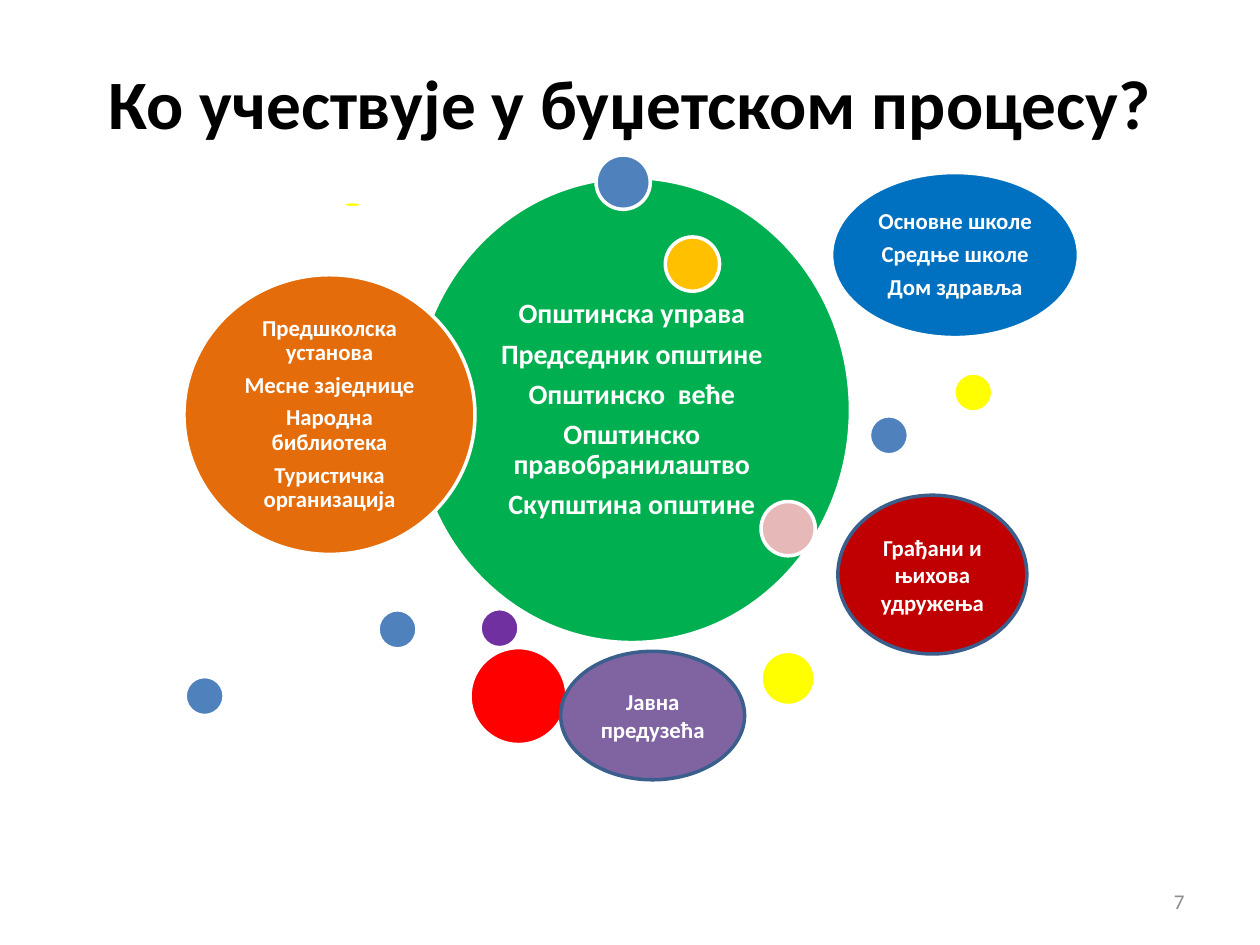
from dataclasses import dataclass

from pptx import Presentation
from pptx.dml.color import RGBColor
from pptx.enum.shapes import MSO_SHAPE
from pptx.enum.text import MSO_ANCHOR, PP_ALIGN
from pptx.util import Pt

ELLIPSE = MSO_SHAPE.OVAL
MIDDLE = MSO_ANCHOR.MIDDLE
CENTER = PP_ALIGN.CENTER
RIGHT = PP_ALIGN.RIGHT

FONT = "Calibri"
WHITE = "FFFFFF"
BLUE = "4F81BD"
YELLOW = "FFFF00"
OUTLINE = "3A5F8C"
SMALL, MEDIUM, LARGE = 22.3, 31, 55.4


@dataclass
class Bubble:
    left: float
    top: float
    width: float
    height: float
    fill: str
    text: str = ""
    size: float = 13
    inset: float = 3.6
    line: str = WHITE
    line_spacing: float = 0.9
    space_after: float = 0.35  # share of the text size


def dot(left: float, top: float, diameter: float, fill: str) -> Bubble:
    return Bubble(left, top, diameter, diameter, fill)


def group(left: float, top: float, width: float, height: float,
          fill: str, text: str) -> Bubble:
    """Outlined bubble for participants outside the municipality."""
    return Bubble(left, top, width, height, fill, text, inset=7.2,
                  line=OUTLINE, line_spacing=1, space_after=0)


# From back to front
BUBBLES = [
    Bubble(236.2, 101.5, 249.8, 265.7, "00B050",
           "Општинска управа\nПредседник општине\nОпштинско  веће\n"
           "Општинско правобранилаштво\nСкупштина општине", size=16, inset=5),
    dot(380.2, 135.4, MEDIUM, "FFC000"),
    dot(274.3, 347.8, SMALL, "7030A0"),
    dot(496.8, 237.6, SMALL, BLUE),
    dot(434.9, 372.2, MEDIUM, YELLOW),
    Bubble(195.8, 115.2, 11.5, 3.6, YELLOW),
    dot(216, 348.5, SMALL, BLUE),
    Bubble(105.1, 157, 166.3, 159.8, "E46C0A",
           "Предшколска установа\nМесне заједнице\n"
           "Народна библиотека\nТуристичка организација"),
    dot(340.6, 88.6, MEDIUM, BLUE),
    dot(268.6, 370.1, LARGE, "FF0000"),
    Bubble(475.2, 98.6, 141.1, 94.3, "0070C0",
           "Основне школе\nСредње школе\nДом здравља"),
    dot(434.9, 286.6, MEDIUM, "E6B9B8"),
    dot(105.8, 386.6, SMALL, BLUE),
    dot(545, 213.1, SMALL, YELLOW),
    group(478.8, 283, 108, 90.7, "C00000", "Грађани и њихова удружења"),
    group(320.4, 372.2, 105.1, 73.4, "8064A2", "Јавна предузећа"),
]


def color(value: str) -> RGBColor:
    return RGBColor.from_string(value)


def set_text(shape, text: str, size: float, fill: str,
             bold: bool = True, alignment=CENTER) -> None:
    text_frame = shape.text_frame
    text_frame.text = text
    text_frame.word_wrap = True
    text_frame.vertical_anchor = MIDDLE
    for paragraph in text_frame.paragraphs:
        paragraph.alignment = alignment
        for run in paragraph.runs:
            run.font.name = FONT
            run.font.size = Pt(size)
            run.font.bold = bold
            run.font.color.rgb = color(fill)


def add_bubble(slide, bubble: Bubble) -> None:
    shape = slide.shapes.add_shape(
        ELLIPSE, Pt(bubble.left), Pt(bubble.top),
        Pt(bubble.width), Pt(bubble.height))
    shape.shadow.inherit = False
    shape.fill.solid()
    shape.fill.fore_color.rgb = color(bubble.fill)
    shape.line.color.rgb = color(bubble.line)
    shape.line.width = Pt(2)
    if not bubble.text:
        return
    set_text(shape, bubble.text, bubble.size, WHITE)
    text_frame = shape.text_frame
    text_frame.margin_left = text_frame.margin_right = Pt(bubble.inset)
    text_frame.margin_top = text_frame.margin_bottom = Pt(min(bubble.inset, 5))
    for paragraph in text_frame.paragraphs:
        paragraph.line_spacing = bubble.line_spacing
        paragraph.space_after = Pt(bubble.space_after * bubble.size)


def main() -> None:
    presentation = Presentation()
    presentation.slide_width = Pt(720)
    presentation.slide_height = Pt(540)
    slide = presentation.slides.add_slide(presentation.slide_layouts[6])

    title = slide.shapes.add_textbox(Pt(36), Pt(21.6), Pt(648), Pt(72.7))
    set_text(title, "Ко учествује у буџетском процесу?", 39.6, "000000")
    number = slide.shapes.add_textbox(Pt(516), Pt(500.5), Pt(168), Pt(28.8))
    set_text(number, "7", 12, "8C8C8C", bold=False, alignment=RIGHT)

    for bubble in BUBBLES:
        add_bubble(slide, bubble)
    presentation.save("out.pptx")


if __name__ == "__main__":
    main()
